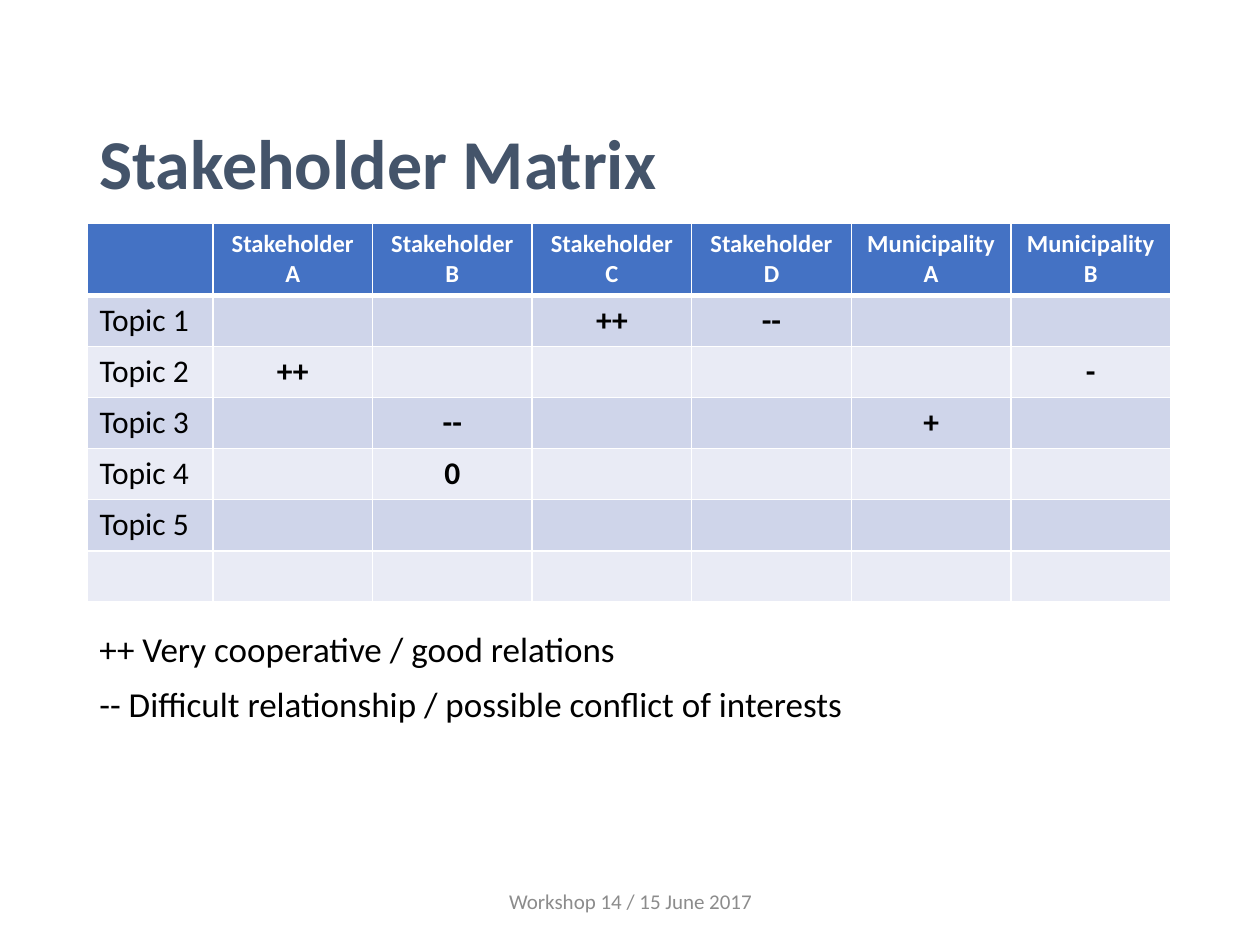
"""Build the stakeholder matrix slide."""
from dataclasses import dataclass

import pptx
import pptx.dml.color
import pptx.enum.text
import pptx.oxml
import pptx.oxml.ns
import pptx.slide
import pptx.table
import pptx.text.text
import pptx.util

Inches = pptx.util.Inches
Pt = pptx.util.Pt
RGBColor = pptx.dml.color.RGBColor
Align = pptx.enum.text.PP_ALIGN
Anchor = pptx.enum.text.MSO_ANCHOR

FONT = "Calibri"
SLATE = RGBColor(0x44, 0x54, 0x6A)
BLUE = RGBColor(0x44, 0x72, 0xC4)
BAND_DARK = RGBColor(0xCF, 0xD5, 0xEA)
BAND_LIGHT = RGBColor(0xE9, 0xEB, 0xF5)
WHITE = RGBColor(0xFF, 0xFF, 0xFF)
BLACK = RGBColor(0x00, 0x00, 0x00)
GREY = RGBColor(0x8C, 0x8C, 0x8C)

PARTIES = ["Stakeholder A", "Stakeholder B", "Stakeholder C", "Stakeholder D",
           "Municipality\nA", "Municipality B"]
TABLE_WIDTH, TOPIC_WIDTH = 8.6, 1
HEADER_HEIGHT, ROW_HEIGHT = 0.57, 0.4


@dataclass
class Topic:
    name: str
    ratings: dict[str, str]


@dataclass
class Label:
    text: str
    left: float
    top: float
    width: float
    height: float
    style: dict
    anchor: Anchor = Anchor.MIDDLE


TOPICS = [
    Topic("Topic 1", {"Stakeholder C": "++", "Stakeholder D": "--"}),
    Topic("Topic 2", {"Stakeholder A": "++", "Municipality B": "-"}),
    Topic("Topic 3", {"Stakeholder B": "--", "Municipality\nA": "+"}),
    Topic("Topic 4", {"Stakeholder B": "0"}),
    Topic("Topic 5", {}),
    Topic("", {}),
]

LABELS = [
    Label("Stakeholder Matrix", 0.69, 0.8, 8.62, 1.05,
          dict(size=40, color=SLATE, bold=True, line_spacing=0.9)),
    Label("Workshop 14 / 15 June 2017", 3.88, 6.95, 2.25, 0.4,
          dict(size=12, color=GREY, align=Align.CENTER)),
    Label("++ Very cooperative / good relations\n"
          "-- Difficult relationship / possible conflict of interests",
          0.69, 4.97, 8.62, 0.94,
          dict(size=20, line_spacing=0.9, space_before=10), Anchor.TOP),
]


def write_text(frame: pptx.text.text.TextFrame, text: str, *, size: float,
               color: RGBColor = BLACK, bold: bool = False,
               align: Align = Align.LEFT, line_spacing: float = 1.0,
               space_before: float = 0) -> None:
    """Write each line of text as one formatted paragraph."""
    for index, line in enumerate(text.split("\n")):
        para = frame.add_paragraph() if index else frame.paragraphs[0]
        para.alignment = align
        para.line_spacing = line_spacing
        para.space_before = Pt(space_before if index else 0)
        span = para.add_run()
        span.text = line
        span.font.name = FONT
        span.font.size = Pt(size)
        span.font.bold = bold
        span.font.color.rgb = color


def add_label(page: pptx.slide.Slide, label: Label) -> None:
    """Add one text box."""
    box = page.shapes.add_textbox(Inches(label.left), Inches(label.top),
                                  Inches(label.width), Inches(label.height))
    box.text_frame.word_wrap = True
    box.text_frame.vertical_anchor = label.anchor
    write_text(box.text_frame, label.text, **label.style)


def draw_cell(cell: pptx.table._Cell, text: str, fill: RGBColor,
              bottom: float = 1, **style) -> None:
    """Give a cell its white borders, fill and text."""
    properties = cell._tc.get_or_add_tcPr()
    for side, width in dict(L=1, R=1, T=1, B=bottom).items():
        properties.append(pptx.oxml.parse_xml(
            f'<a:ln{side} {pptx.oxml.ns.nsdecls("a")} w="{Pt(width)}"><a:solidFill>'
            f'<a:srgbClr val="{WHITE}"/></a:solidFill></a:ln{side}>'))
    cell.fill.solid()
    cell.fill.fore_color.rgb = fill
    if text:
        write_text(cell.text_frame, text, **style)


def add_matrix(page: pptx.slide.Slide) -> None:
    """Add the table of topics against parties."""
    height = HEADER_HEIGHT + ROW_HEIGHT * len(TOPICS)
    table = page.shapes.add_table(
        len(TOPICS) + 1, len(PARTIES) + 1, Inches(0.69), Inches(1.77),
        Inches(TABLE_WIDTH), Inches(height)).table
    for index, column in enumerate(table.columns):
        party_width = (TABLE_WIDTH - TOPIC_WIDTH) / len(PARTIES)
        column.width = Inches(party_width if index else TOPIC_WIDTH)
    for index, row in enumerate(table.rows):
        row.height = Inches(ROW_HEIGHT if index else HEADER_HEIGHT)
    for column, party in enumerate(["", *PARTIES]):
        draw_cell(table.cell(0, column), party, BLUE, bottom=3, size=14,
                  color=WHITE, bold=True, align=Align.CENTER)
    for row, topic in enumerate(TOPICS, 1):
        fill = BAND_DARK if row % 2 else BAND_LIGHT
        draw_cell(table.cell(row, 0), topic.name, fill, size=18)
        for column, party in enumerate(PARTIES, 1):
            draw_cell(table.cell(row, column), topic.ratings.get(party, ""), fill,
                      size=18, bold=True, align=Align.CENTER)


def main() -> None:
    """Build and save the deck."""
    deck = pptx.Presentation()
    deck.slide_width, deck.slide_height = Inches(10), Inches(7.5)
    page = deck.slides.add_slide(deck.slide_layouts[6])
    add_matrix(page)
    for label in LABELS:
        add_label(page, label)
    deck.save("out.pptx")


if __name__ == "__main__":
    main()
